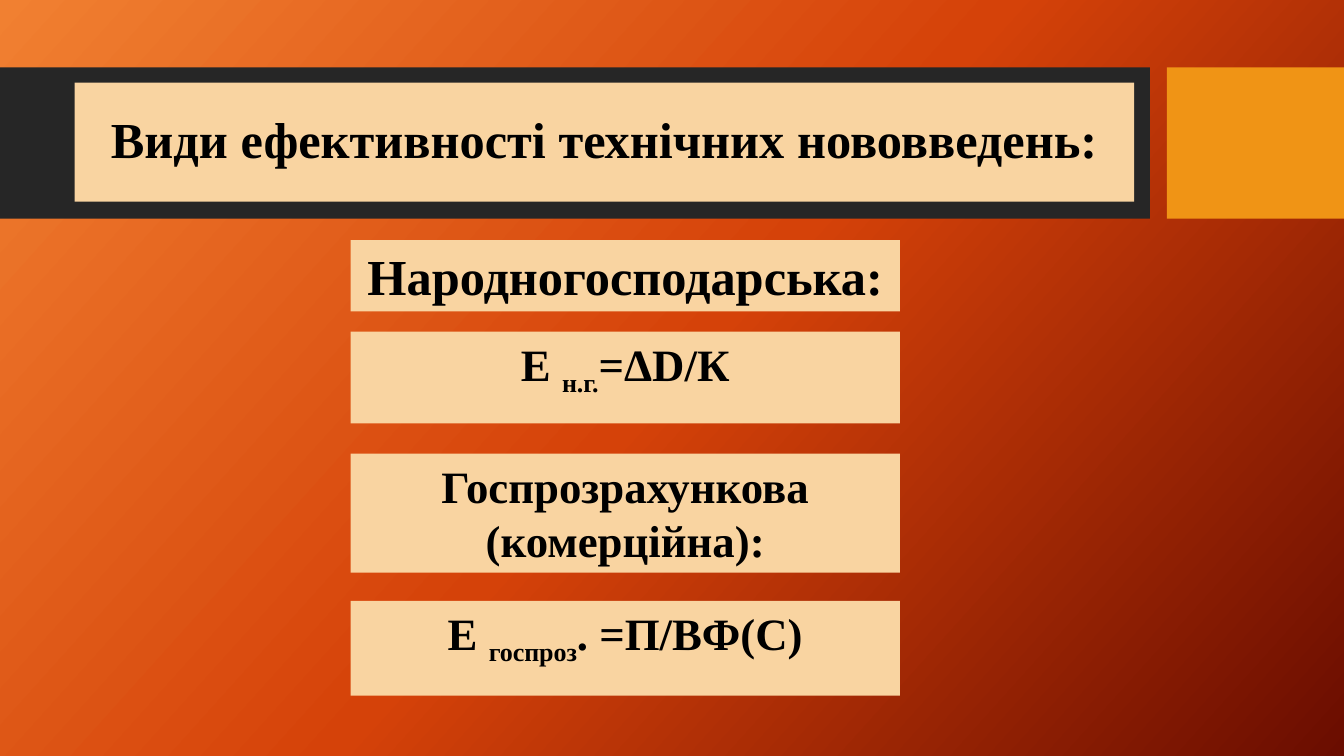
from copy import deepcopy
from dataclasses import dataclass

from pptx import Presentation
from pptx.dml.color import RGBColor
from pptx.enum.shapes import MSO_SHAPE as Preset
from pptx.enum.text import MSO_ANCHOR as Anchor, MSO_AUTO_SIZE as AutoSize, PP_ALIGN as Align
from pptx.oxml.ns import qn
from pptx.shapes.autoshape import Shape
from pptx.slide import Slide
from pptx.text.text import _Paragraph as Paragraph
from pptx.util import Cm, Pt


@dataclass(frozen=True)
class Theme:
    font: str = "Times New Roman"
    ink: str = "000000"
    panel: str = "F9D4A1"
    dark_bar: str = "262626"
    accent_bar: str = "F09415"
    gradient: tuple[str, ...] = ("F18031", "D54209", "6A0D00")
    gradient_angle: int = 42
    heading: int = 36
    body: int = 32
    subscript: str = "-25000"


@dataclass(frozen=True)
class Bar:
    left: float
    width: float
    color: str


@dataclass(frozen=True)
class Panel:
    top: float
    height: float
    size: int
    text: str
    subscript: str = ""
    tail: str = ""


THEME = Theme()
BAR_TOP, BAR_HEIGHT = 1.7, 3.81
PANEL_LEFT, PANEL_WIDTH = 8.84, 13.84
BARS = (
    Bar(0, 28.98, THEME.dark_bar),
    Bar(29.41, 4.46, THEME.accent_bar),
)
PANELS = (
    Panel(6.05, 1.8, THEME.heading, "Народногосподарська:"),
    Panel(8.36, 2.31, THEME.body, "Е ", "н.г.", "=ΔD/К"),
    Panel(11.43, 3.0, THEME.body, "Госпрозрахункова (комерційна):"),
    Panel(15.14, 2.39, THEME.body, "Е ", "госпроз", ". =П/ВФ(С)"),
)


def paint(shape: Shape, color: str) -> None:
    shape.fill.solid()
    shape.fill.fore_color.rgb = RGBColor.from_string(color)


def style(paragraph: Paragraph, size: int) -> None:
    paragraph.alignment = Align.CENTER
    paragraph.font.name = THEME.font
    paragraph.font.size = Pt(size)
    paragraph.font.bold = True
    paragraph.font.color.rgb = RGBColor.from_string(THEME.ink)


def draw_background(slide: Slide) -> None:
    fill = slide.background.fill
    fill.gradient()
    fill.gradient_angle = 360 - THEME.gradient_angle
    stop_list = next(slide.element.iter(qn("a:gsLst")))
    stop_list.append(deepcopy(stop_list[-1]))
    last = len(THEME.gradient) - 1
    for index, (stop, color) in enumerate(zip(fill.gradient_stops, THEME.gradient)):
        stop.position = index / last
        stop.color.rgb = RGBColor.from_string(color)


def draw_bar(slide: Slide, bar: Bar) -> None:
    band = slide.shapes.add_shape(
        Preset.RECTANGLE, Cm(bar.left), Cm(BAR_TOP), Cm(bar.width), Cm(BAR_HEIGHT)
    )
    band.shadow.inherit = False
    band.line.fill.background()
    paint(band, bar.color)


def draw_title(slide: Slide, text: str) -> None:
    title = slide.shapes.title
    title.left, title.top, title.width, title.height = Cm(1.88), Cm(2.08), Cm(26.7), Cm(3)
    paint(title, THEME.panel)
    frame = title.text_frame
    frame.text = text
    frame.word_wrap = True
    frame.auto_size = AutoSize.NONE
    frame.vertical_anchor = Anchor.MIDDLE
    heading = frame.paragraphs[0]
    heading.line_spacing = 0.9
    style(heading, THEME.heading)
    slide.shapes.element.append(title.element)


def draw_panel(slide: Slide, panel: Panel) -> None:
    box = slide.shapes.add_textbox(
        Cm(PANEL_LEFT), Cm(panel.top), Cm(PANEL_WIDTH), Cm(panel.height)
    )
    paint(box, THEME.panel)
    frame = box.text_frame
    frame.word_wrap = True
    frame.auto_size = AutoSize.NONE
    formula = frame.paragraphs[0]
    style(formula, panel.size)
    formula.add_run().text = panel.text
    if panel.subscript:
        index = formula.add_run()
        index.text = panel.subscript
        index.font._element.set("baseline", THEME.subscript)
        formula.add_run().text = panel.tail


def main() -> None:
    deck = Presentation()
    deck.slide_width, deck.slide_height = Cm(33.87), Cm(19.05)
    slide = deck.slides.add_slide(deck.slide_layouts.get_by_name("Title Only"))
    draw_background(slide)
    for bar in BARS:
        draw_bar(slide, bar)
    draw_title(slide, "Види ефективності технічних нововведень:")
    for panel in PANELS:
        draw_panel(slide, panel)
    deck.save("out.pptx")


if __name__ == "__main__":
    main()
